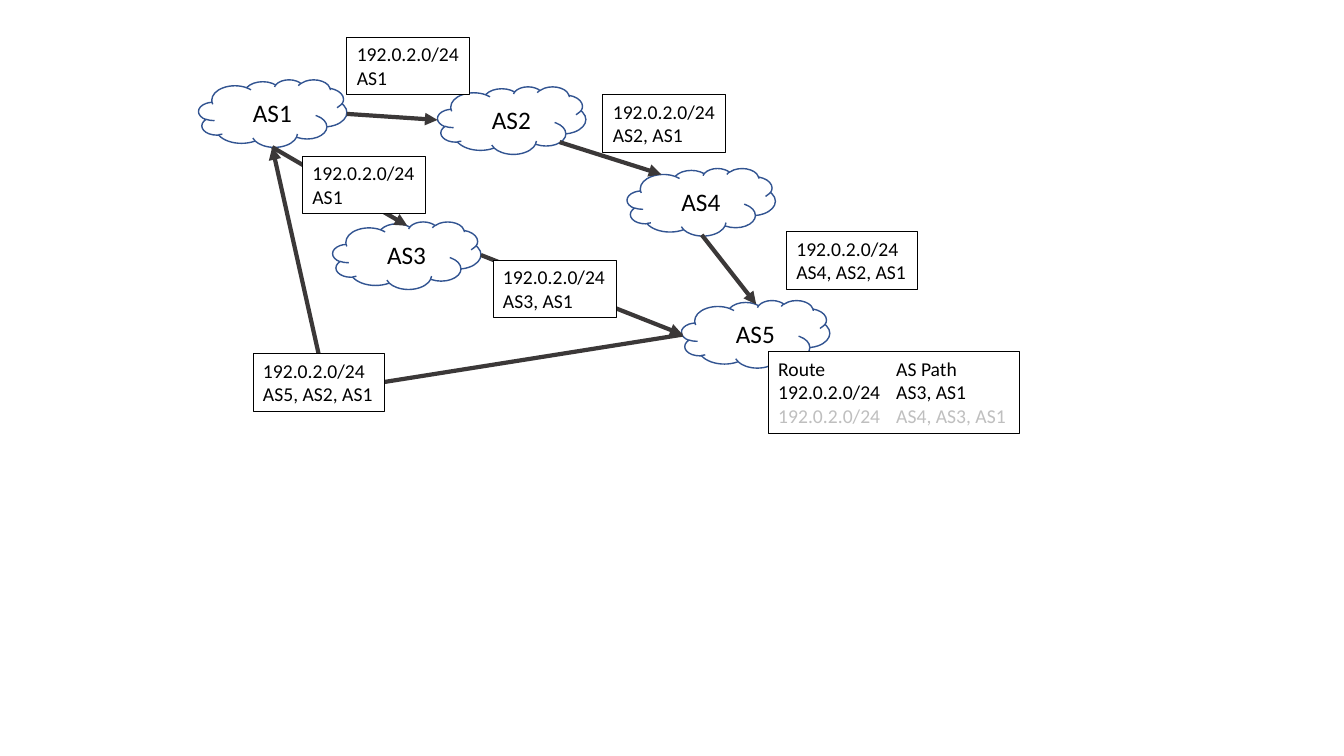
from lxml.etree import SubElement
from pptx import Presentation
from pptx.dml.color import RGBColor
from pptx.enum.shapes import MSO_CONNECTOR, MSO_SHAPE
from pptx.enum.text import MSO_ANCHOR, MSO_AUTO_SIZE, PP_ALIGN
from pptx.oxml.ns import qn
from pptx.util import Pt

PX = 9144  # 100 px to the inch
CLOUD_WIDTH, CLOUD_HEIGHT = 147, 67
PREFIX = "192.0.2.0/24"


def paint(color_format, color):
    color_format.rgb = RGBColor.from_string(color)


def write(shape, text, size):
    """Fill a shape with black, left-aligned text that does not wrap."""
    frame = shape.text_frame
    frame.text = text
    frame.word_wrap = False
    frame.auto_size = MSO_AUTO_SIZE.SHAPE_TO_FIT_TEXT
    frame.vertical_anchor = MSO_ANCHOR.TOP
    for para in frame.paragraphs:
        para.alignment = PP_ALIGN.LEFT
        for span in para.runs:
            span.font.name = "Calibri"
            span.font.size = Pt(size)
            paint(span.font.color, "000000")


deck = Presentation()
deck.slide_width, deck.slide_height = 1333 * PX, 750 * PX
page = deck.slides.add_slide(deck.slide_layouts[6])
shapes = page.shapes

# Autonomous systems
clouds = [
    ("AS1", 197, 79),
    ("AS3", 330, 220),
    ("AS2", 434, 86),
    ("AS4", 622, 167),
    ("AS5", 676, 298),
]
for name, left, top in clouds:
    cloud = shapes.add_shape(MSO_SHAPE.CLOUD, left * PX, top * PX,
                             CLOUD_WIDTH * PX, CLOUD_HEIGHT * PX)
    cloud.shadow.inherit = False
    cloud.fill.background()
    cloud.line.width = Pt(1)
    paint(cloud.line.color, "325491")
    label = shapes.add_textbox((left + 44) * PX, (top + 13) * PX, 59 * PX, 40 * PX)
    write(label, name, 18)

# Announcements between systems: start, end, arrowhead
links = [
    ((344, 113), (434, 119), True),
    ((555, 141), (656, 173), True),
    ((270, 146), (404, 224), True),
    ((477, 253), (677, 332), True),
    ((696, 233), (750, 302), True),
    ((677, 332), (381, 379), False),
    ((316, 351), (270, 146), True),
]
for (x1, y1), (x2, y2), has_arrow in links:
    link = shapes.add_connector(MSO_CONNECTOR.STRAIGHT, x1 * PX, y1 * PX, x2 * PX, y2 * PX)
    link.line.width = Pt(3)
    paint(link.line.color, "3B3838")
    if has_arrow:
        SubElement(link.line._get_or_add_ln(), qn("a:tailEnd"), type="triangle")
    SubElement(link._element.spPr, qn("a:effectLst"))

# Announced routes, with the route table of AS5 last
routes = [
    (344, 37, 122, 57, f"{PREFIX}\nAS1"),
    (300, 155, 122, 57, f"{PREFIX}\nAS1"),
    (598, 94, 122, 57, f"{PREFIX}\nAS2, AS1"),
    (489, 258, 122, 57, f"{PREFIX}\nAS3, AS1"),
    (780, 230, 130, 57, f"{PREFIX}\nAS4, AS2, AS1"),
    (251, 351, 130, 57, f"{PREFIX}\nAS5, AS2, AS1"),
    (762, 349, 249, 81,
     f"Route\tAS Path\n{PREFIX}\tAS3, AS1\n{PREFIX}\tAS4, AS3, AS1"),
]
for left, top, width, height, text in routes:
    box = shapes.add_shape(MSO_SHAPE.RECTANGLE, left * PX, top * PX, width * PX, height * PX)
    box.shadow.inherit = False
    box.fill.solid()
    paint(box.fill.fore_color, "FFFFFF")
    box.line.width = Pt(0.75)
    paint(box.line.color, "000000")
    write(box, text, 14)

route_table = box
for para in route_table.text_frame.paragraphs:
    tab_stops = SubElement(para._p.get_or_add_pPr(), qn("a:tabLst"))
    SubElement(tab_stops, qn("a:tab"), pos=str(117 * PX), algn="l")
for span in route_table.text_frame.paragraphs[-1].runs:
    paint(span.font.color, "BFBFBF")

deck.save("out.pptx")
